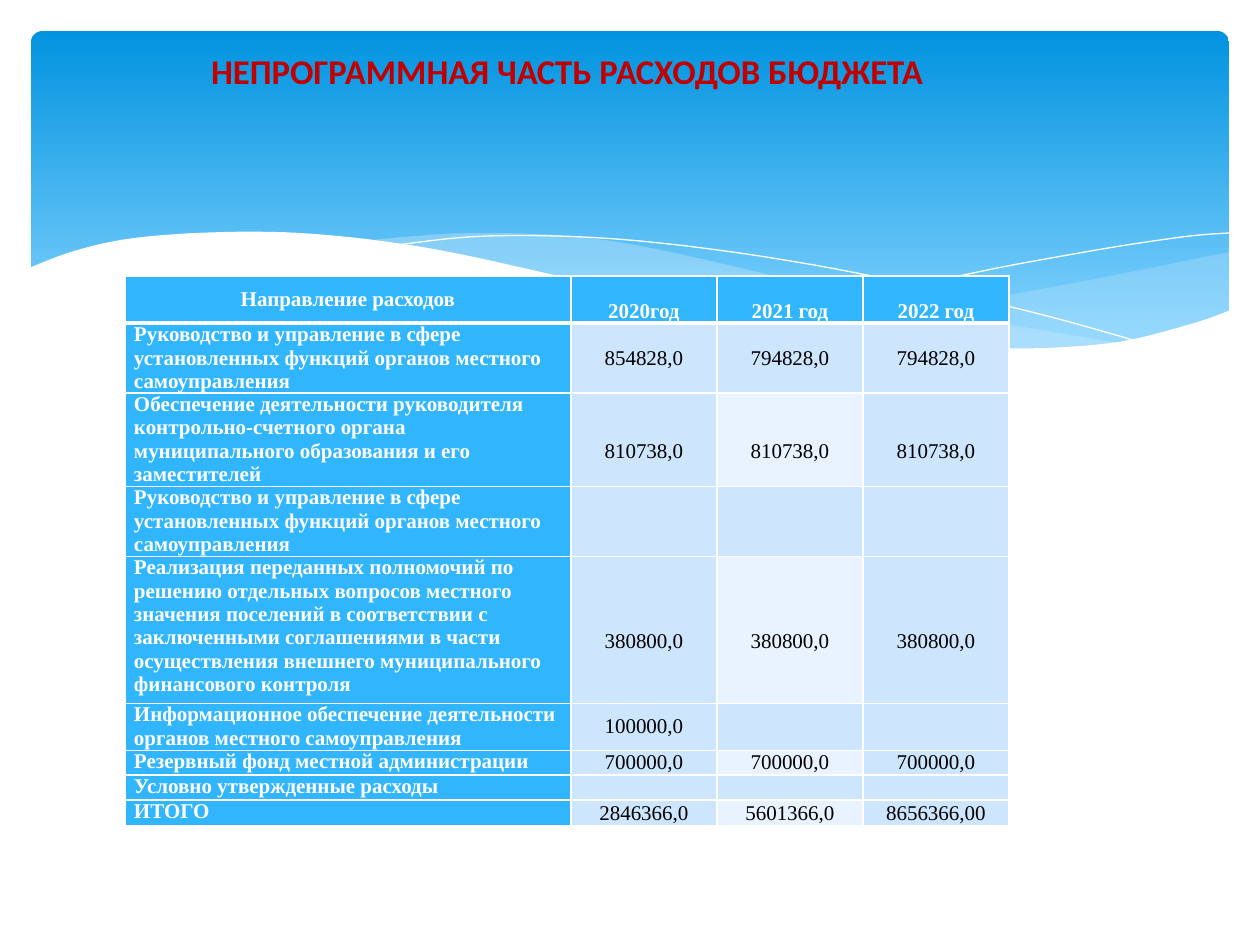
from lxml import etree
from pptx import Presentation
from pptx.dml.color import RGBColor
from pptx.enum.shapes import MSO_SHAPE
from pptx.enum.text import MSO_ANCHOR, PP_ALIGN
from pptx.oxml.ns import qn
from pptx.util import Emu, Pt

PX = 914400 / 126
FINE = 10  # freeform units per px
TOP, MIDDLE, BOTTOM = MSO_ANCHOR.TOP, MSO_ANCHOR.MIDDLE, MSO_ANCHOR.BOTTOM
LEFT, CENTER = PP_ALIGN.LEFT, PP_ALIGN.CENTER

COLORS = {
    "white": "FFFFFF", "black": "000000", "title": "C00000",
    "sky_top": "0293E0", "sky_bottom": "83D3FE", "wave": "C6E7FC",
    "head": "31B6FD", "band": "CEE5FE", "light": "E8F3FF",
}
TITLE = "НЕПРОГРАММНАЯ ЧАСТЬ РАСХОДОВ БЮДЖЕТА"
HEADER = ["Направление расходов", "2020год", "2021 год", "2022 год"]
MANAGEMENT = ("Руководство и управление в сфере установленных функций "
              "органов местного самоуправления")
# label, values by year, row height, space above the values
ROWS = [
    (MANAGEMENT, ["854828,0", "794828,0", "794828,0"], 70, 0),
    ("Обеспечение деятельности руководителя контрольно-счетного органа "
     "муниципального образования и его заместителей",
     ["810738,0", "810738,0", "810738,0"], 93, 24),
    (MANAGEMENT, ["", "", ""], 70, 0),
    ("Реализация переданных полномочий по решению отдельных вопросов местного "
     "значения поселений в соответствии с заключенными соглашениями в части "
     "осуществления внешнего муниципального финансового контроля",
     ["380800,0", "380800,0", "380800,0"], 147, 24),
    ("Информационное обеспечение деятельности органов местного самоуправления",
     ["100000,0", "", ""], 47, 0),
    ("Резервный фонд местной администрации",
     ["700000,0", "700000,0", "700000,0"], 25, 0),
    ("Условно утвержденные расходы", ["", "", ""], 25, 0),
    ("ИТОГО", ["2846366,0", "5601366,0", "8656366,00"], 26, 0),
]
HEADER_HEIGHT = 47
COLUMNS = [446, 146, 146, 146]
TABLE_LEFT, TABLE_TOP = 125, 276

RIGHT_WAVE = [
    [(1229, 252), (1085, 281), (918, 312), (833, 334)],
    [(833, 334), (937, 348), (1038, 349), (1140, 338), (1229, 311)],
]
MIDDLE_WAVE = [
    [(360, 241), (475, 233), (612, 241), (793, 280), (934, 311), (1125, 344)],
    [(1125, 344), (1030, 350), (926, 346), (819, 333), (713, 312), (566, 280),
     (456, 256), (360, 241)],
]
LONG_LINE = [[(389, 246), (487, 236), (616, 239), (766, 257), (916, 285),
              (1047, 316), (1143, 343)]]
RISING_LINE = [[(772, 324), (876, 296), (978, 272), (1091, 251), (1182, 237),
                (1229, 233)]]
WHITE_WAVE = [
    [(29, 268), (74, 251), (134, 238), (223, 232), (315, 234), (428, 248),
     (563, 277), (699, 309), (842, 334), (980, 348), (1103, 344), (1184, 326),
     (1231, 310)],
    [(1231, 415), (29, 415)],
]


def px(n):
    return Emu(round(n * PX))


def rgb(name):
    return RGBColor.from_string(COLORS[name])


def smooth(points, steps=6):
    """Points along a Catmull-Rom curve through the given points."""
    if len(points) < 3:
        return points
    ends = [points[0], *points, points[-1]]
    curve = [points[0]]
    for a, b, c, d in zip(ends, ends[1:], ends[2:], ends[3:]):
        for i in range(1, steps + 1):
            t = i / steps
            curve.append(tuple(
                (2 * q + (r - p) * t + (2 * p - 5 * q + 4 * r - s) * t ** 2
                 + (3 * q - p - 3 * r + s) * t ** 3) / 2
                for p, q, r, s in zip(a, b, c, d)))
    return curve


def add_curve(shapes, parts, fill=None, alpha=100):
    """A filled wave, or an open white hairline when there is no fill."""
    points = [(x * FINE, y * FINE) for part in parts for x, y in smooth(part)]
    builder = shapes.build_freeform(*points[0], scale=PX / FINE)
    builder.add_line_segments(points[1:], close=fill is not None)
    sp = builder.convert_to_shape()
    sp.shadow.inherit = False
    if fill is None:
        sp.fill.background()
        sp.line.color.rgb = rgb("white")
        sp.line.width = Pt(0)
        return
    sp.line.fill.background()
    sp.fill.solid()
    sp.fill.fore_color.rgb = rgb(fill)
    if alpha < 100:
        color = sp._element.spPr.find(qn("a:solidFill"))[0]
        etree.SubElement(color, qn("a:alpha"), val=str(alpha * 1000))


def add_sky(shapes):
    sp = shapes.add_shape(MSO_SHAPE.ROUNDED_RECTANGLE,
                          px(31), px(31), px(1198), px(340))
    sp.adjustments[0] = 0.034
    sp.shadow.inherit = False
    sp.line.fill.background()
    sp.fill.gradient()
    sp.fill.gradient_angle = 270
    stops = [(0, "sky_top"), (0.9, "sky_bottom")]
    for stop, (position, color) in zip(sp.fill.gradient_stops, stops):
        stop.position = position
        stop.color.rgb = rgb(color)


def write(p, text, align, color, **font):
    p.alignment = align
    r = p.add_run()
    r.text = text
    r.font.color.rgb = rgb(color)
    for key, value in font.items():
        setattr(r.font, key, value)


def set_borders(cell, bottom):
    tcPr = cell._tc.get_or_add_tcPr()
    for side, width in {"L": 1, "R": 1, "T": 1, "B": bottom}.items():
        ln = etree.SubElement(tcPr, qn("a:ln" + side), w=str(Pt(width)))
        fill = etree.SubElement(ln, qn("a:solidFill"))
        etree.SubElement(fill, qn("a:srgbClr"), val=COLORS["white"])


def fill_cell(cell, text, fill, color, bold, align, anchor, above=0, bottom=1):
    set_borders(cell, bottom)
    cell.fill.solid()
    cell.fill.fore_color.rgb = rgb(fill)
    layout = {"margin_left": px(9), "margin_right": px(9),
              "margin_top": px(above), "margin_bottom": 0,
              "vertical_anchor": anchor}
    for key, value in layout.items():
        setattr(cell, key, value)
    p = cell.text_frame.paragraphs[0]
    if text:
        write(p, text, align, color, name="Times New Roman", size=Pt(12), bold=bold)
    else:
        p._p.get_or_add_endParaRPr().set("sz", "1000")


def add_budget_table(shapes):
    heights = [HEADER_HEIGHT] + [row[2] for row in ROWS]
    table = shapes.add_table(len(heights), len(COLUMNS), px(TABLE_LEFT),
                             px(TABLE_TOP), px(sum(COLUMNS)), px(sum(heights))).table
    for column, width in zip(table.columns, COLUMNS):
        column.width = px(width)
    for row, height in zip(table.rows, heights):
        row.height = px(height)
    for j, text in enumerate(HEADER):
        fill_cell(table.cell(0, j), text, "head", "white", True, CENTER,
                  BOTTOM if j else MIDDLE, bottom=3)
    for i, (label, values, _, above) in enumerate(ROWS, 1):
        fill_cell(table.cell(i, 0), label, "head", "white", True, LEFT, TOP)
        for j, value in enumerate(values, 1):
            light = j == 2 and i % 2 == 0 and value
            fill_cell(table.cell(i, j), value, "light" if light else "band",
                      "black", False, CENTER, MIDDLE, above)


def add_title(shapes):
    tf = shapes.add_textbox(0, px(50), px(1134), px(110)).text_frame
    tf.word_wrap = True
    tf.margin_top = 0
    tf.vertical_anchor = TOP
    write(tf.paragraphs[0], TITLE, CENTER, "title",
          name="Calibri", size=Pt(19.8), bold=True)


def main():
    prs = Presentation()
    prs.slide_width, prs.slide_height = px(1260), px(945)
    shapes = prs.slides.add_slide(prs.slide_layouts[6]).shapes
    add_sky(shapes)
    add_curve(shapes, RIGHT_WAVE, "wave", 29)
    add_curve(shapes, MIDDLE_WAVE, "wave", 40)
    add_curve(shapes, LONG_LINE)
    add_curve(shapes, RISING_LINE)
    add_curve(shapes, WHITE_WAVE, "white")
    add_budget_table(shapes)
    add_title(shapes)
    prs.save("out.pptx")


if __name__ == "__main__":
    main()
